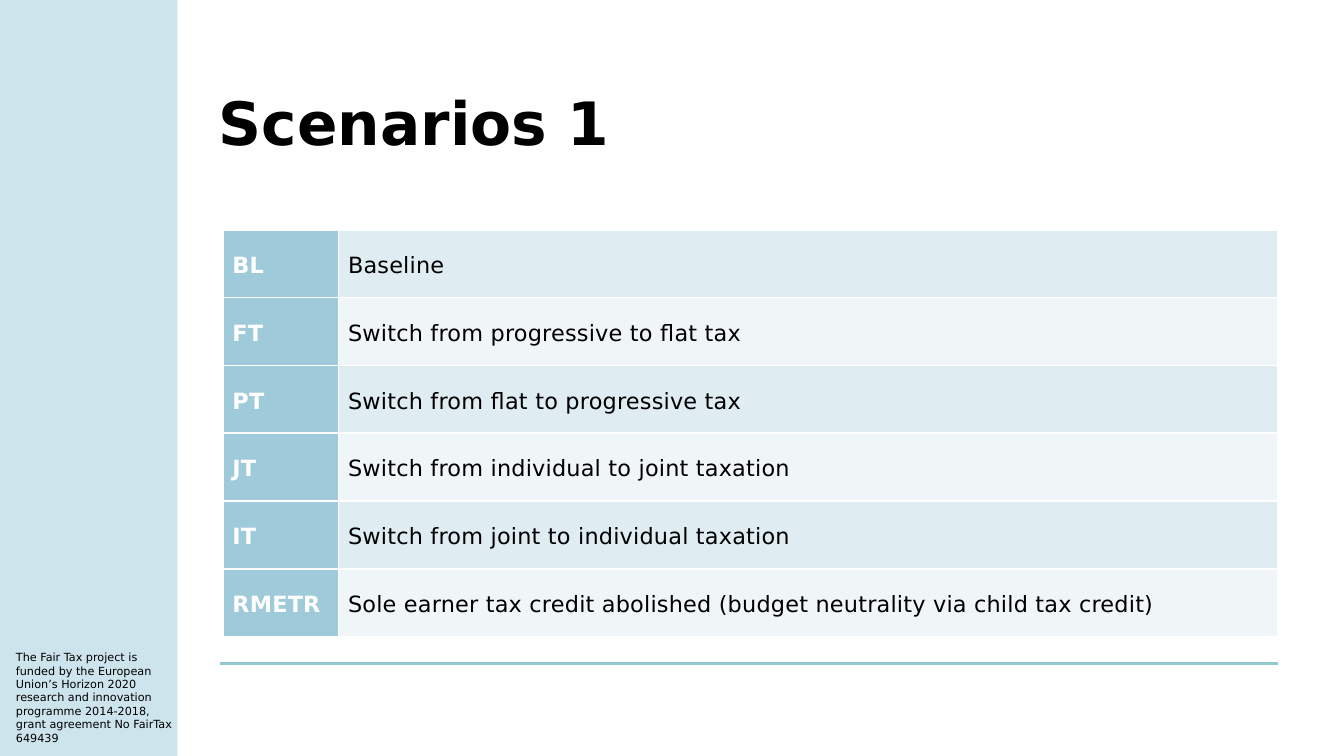
"""Build the Scenarios 1 slide with its table of tax scenarios."""
from typing import NamedTuple

from lxml.etree import SubElement
from pptx import Presentation
from pptx.dml.color import RGBColor
from pptx.enum.shapes import MSO_CONNECTOR as Connector, MSO_SHAPE as Shape
from pptx.enum.text import MSO_ANCHOR as Anchor
from pptx.oxml import parse_xml
from pptx.oxml.ns import nsdecls, qn
from pptx.util import Inches, Pt

FONT = "DejaVu Sans"
BLACK = RGBColor(0x00, 0x00, 0x00)
WHITE = RGBColor(0xFF, 0xFF, 0xFF)
BLUE = RGBColor(0x9E, 0xCA, 0xDA)
RULE_TEAL = RGBColor(0x93, 0xC7, 0xD0)
BANDS = (RGBColor(0xDF, 0xEC, 0xF1), RGBColor(0xF0, 0xF6, 0xF8))
PAGE_WIDTH = 10
PAGE_HEIGHT = PAGE_WIDTH * 9 / 16


class Scenario(NamedTuple):
    code: str
    description: str


class Style(NamedTuple):
    size: float
    color: RGBColor
    bold: bool = False


class Area(NamedTuple):
    left: float
    top: float
    width: float
    height: float

    def lengths(self) -> list:
        return [Inches(value) for value in self]


SCENARIOS = (
    Scenario("BL", "Baseline"),
    Scenario("FT", "Switch from progressive to flat tax"),
    Scenario("PT", "Switch from flat to progressive tax"),
    Scenario("JT", "Switch from individual to joint taxation"),
    Scenario("IT", "Switch from joint to individual taxation"),
    Scenario("RMETR", "Sole earner tax credit abolished (budget neutrality via child tax credit)"),
)
FUNDING = (
    "The Fair Tax project is funded by the European Union’s Horizon 2020 research and "
    "innovation programme 2014-2018, grant agreement No FairTax 649439"
)
COLUMN_WIDTHS = (0.86, 6.99)
TABLE_AREA = Area(1.66, 1.71, sum(COLUMN_WIDTHS), 3.03)


def add_span(para, text: str, style: Style):
    span = para.add_run()
    span.text = text
    span.font.name = FONT
    span.font.size = Pt(style.size)
    span.font.bold = style.bold
    span.font.color.rgb = style.color
    return span


def add_text(page, area: Area, text: str, style: Style, line_spacing: float, anchor: Anchor) -> None:
    frame = page.shapes.add_textbox(*area.lengths()).text_frame
    frame.word_wrap = True
    frame.vertical_anchor = anchor
    para = frame.paragraphs[0]
    para.line_spacing = line_spacing
    add_span(para, text, style)


def add_sidebar(page) -> None:
    sidebar = page.shapes.add_shape(Shape.RECTANGLE, *Area(0, 0, 1.32, PAGE_HEIGHT).lengths())
    sidebar.shadow.inherit = False
    sidebar.line.fill.background()
    sidebar.fill.solid()
    sidebar.fill.fore_color.rgb = BLUE
    color = sidebar.fill._xPr.find(f".//{qn('a:srgbClr')}")
    SubElement(color, qn("a:alpha"), val="50000")


def add_rule(page) -> None:
    rule = page.shapes.add_connector(
        Connector.STRAIGHT, Inches(1.64), Inches(4.94), Inches(9.51), Inches(4.94)
    )
    rule.line.color.rgb = RULE_TEAL
    rule.line.width = Pt(1.5)
    SubElement(rule._element.spPr, qn("a:effectLst"))


def add_borders(cell) -> None:
    properties = cell._tc.get_or_add_tcPr()
    for index, side in enumerate(("lnL", "lnR", "lnT", "lnB")):
        border = parse_xml(
            f'<a:{side} {nsdecls("a")} w="{Pt(1)}"><a:solidFill>'
            f'<a:srgbClr val="{WHITE}"/></a:solidFill></a:{side}>'
        )
        properties.insert(index, border)


def fill_cell(cell, text: str, style: Style, fill: RGBColor) -> None:
    cell.fill.solid()
    cell.fill.fore_color.rgb = fill
    cell.vertical_anchor = Anchor.MIDDLE
    cell.margin_left = cell.margin_right = Inches(0.07)
    cell.margin_top = cell.margin_bottom = 0
    para = cell.text_frame.paragraphs[0]
    para.line_spacing = 1.15
    para.space_after = Pt(6)
    span = add_span(para, text, style)
    span.font._element.set("spc", "10")
    add_borders(cell)


def add_scenarios(page) -> None:
    table = page.shapes.add_table(
        len(SCENARIOS), len(COLUMN_WIDTHS), *TABLE_AREA.lengths()
    ).table
    table.first_row = False
    table.first_col = True
    for column, width in zip(table.columns, COLUMN_WIDTHS):
        column.width = Inches(width)
    for index, scenario in enumerate(SCENARIOS):
        fill_cell(table.cell(index, 0), scenario.code, Style(12, WHITE, True), BLUE)
        fill_cell(table.cell(index, 1), scenario.description, Style(12, BLACK), BANDS[index % 2])


def main() -> None:
    deck = Presentation()
    deck.slide_width, deck.slide_height = Inches(PAGE_WIDTH), Inches(PAGE_HEIGHT)
    page = deck.slides.add_slide(deck.slide_layouts[6])
    add_sidebar(page)
    add_rule(page)
    add_text(page, Area(0.02, 4.79, 1.38, 0.81), FUNDING, Style(6, BLACK), 1.0, Anchor.TOP)
    add_text(
        page, Area(1.53, 0.65, 7.98, 0.58), "Scenarios 1", Style(32, BLACK, True), 0.9, Anchor.MIDDLE
    )
    add_scenarios(page)
    deck.save("out.pptx")


if __name__ == "__main__":
    main()
